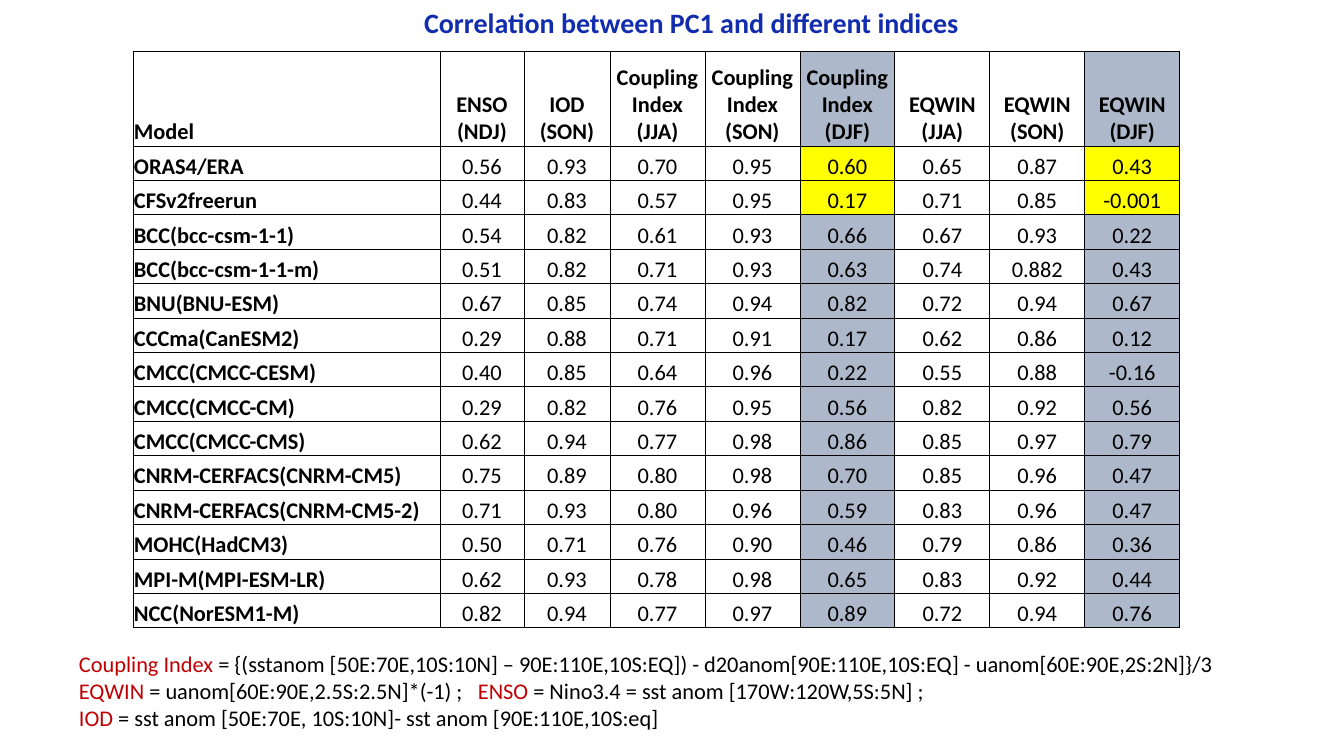
"""Build a slide with a table of PC1 correlations and the index definitions."""
from lxml import etree
from pptx import Presentation
from pptx.dml.color import RGBColor
from pptx.enum.text import MSO_ANCHOR, MSO_AUTO_SIZE, PP_ALIGN
from pptx.oxml.ns import qn
from pptx.util import Pt

LEFT, CENTER = PP_ALIGN.LEFT, PP_ALIGN.CENTER
BOTTOM = MSO_ANCHOR.BOTTOM
GROW = MSO_AUTO_SIZE.SHAPE_TO_FIT_TEXT
THEME = {
    "font": "Calibri", "title_size": 20, "text_size": 16, "border_width": 0.5,
    "title": "122CAE", "text": "000000", "term": "C00000", "paper": "FFFFFF",
    "shade": "ADB9CA", "highlight": "FFFF00",
}


def px(length):
    """Turn slide pixels into EMU."""
    return round(length * 914400 / 100.8)


def write(paragraph, text, color="text", size="text_size", bold=False, align=LEFT):
    """Add a formatted run to a paragraph."""
    paragraph.alignment = align
    run = paragraph.add_run()
    run.text = text
    run.font.name = THEME["font"]
    run.font.size = Pt(THEME[size])
    run.font.bold = bold
    run.font.color.rgb = RGBColor.from_string(THEME[color])


HEADERS = [
    "Model", "ENSO\n(NDJ)", "IOD\n(SON)",
    "Coupling Index (JJA)", "Coupling Index (SON)", "Coupling Index (DJF)",
    "EQWIN (JJA)", "EQWIN (SON)", "EQWIN (DJF)",
]
MODELS = """
ORAS4/ERA 0.56 0.93 0.70 0.95 0.60 0.65 0.87 0.43
CFSv2freerun 0.44 0.83 0.57 0.95 0.17 0.71 0.85 -0.001
BCC(bcc-csm-1-1) 0.54 0.82 0.61 0.93 0.66 0.67 0.93 0.22
BCC(bcc-csm-1-1-m) 0.51 0.82 0.71 0.93 0.63 0.74 0.882 0.43
BNU(BNU-ESM) 0.67 0.85 0.74 0.94 0.82 0.72 0.94 0.67
CCCma(CanESM2) 0.29 0.88 0.71 0.91 0.17 0.62 0.86 0.12
CMCC(CMCC-CESM) 0.40 0.85 0.64 0.96 0.22 0.55 0.88 -0.16
CMCC(CMCC-CM) 0.29 0.82 0.76 0.95 0.56 0.82 0.92 0.56
CMCC(CMCC-CMS) 0.62 0.94 0.77 0.98 0.86 0.85 0.97 0.79
CNRM-CERFACS(CNRM-CM5) 0.75 0.89 0.80 0.98 0.70 0.85 0.96 0.47
CNRM-CERFACS(CNRM-CM5-2) 0.71 0.93 0.80 0.96 0.59 0.83 0.96 0.47
MOHC(HadCM3) 0.50 0.71 0.76 0.90 0.46 0.79 0.86 0.36
MPI-M(MPI-ESM-LR) 0.62 0.93 0.78 0.98 0.65 0.83 0.92 0.44
NCC(NorESM1-M) 0.82 0.94 0.77 0.97 0.89 0.72 0.94 0.76
"""
DEFINITIONS = [
    [("Coupling Index ", "term"),
     ("= {(sstanom [50E:70E,10S:10N] – 90E:110E,10S:EQ]) - d20anom[90E:110E,10S:EQ]"
      " - uanom[60E:90E,2S:2N]}/3", "text")],
    [("EQWIN", "term"), (" = uanom[60E:90E,2.5S:2.5N]*(-1) ;\t", "text"),
     ("ENSO", "term"), (" = Nino3.4 = sst anom [170W:120W,5S:5N] ;", "text")],
    [("IOD", "term"), (" = sst anom [50E:70E, 10S:10N]- sst anom [90E:110E,10S:eq]", "text")],
]
COLUMN_WIDTHS = [307, 84, 86] + [95] * 6
HEADER_HEIGHT, BODY_HEIGHT = 95, 482
SHADED_COLUMNS = (5, 8)
HIGHLIGHTED_ROWS = (1, 2)

presentation = Presentation()
presentation.slide_width, presentation.slide_height = px(1344), px(756)
slide = presentation.slides.add_slide(presentation.slide_layouts[5])

title = slide.shapes.title
title.left, title.top, title.width, title.height = px(363), px(0), px(657), px(44)
title.fill.solid()
title.fill.fore_color.rgb = RGBColor.from_string(THEME["paper"])
title.text_frame.auto_size = GROW
write(title.text_frame.paragraphs[0], "Correlation between PC1 and different indices",
      color="title", size="title_size", bold=True, align=CENTER)

rows = [HEADERS] + [line.split() for line in MODELS.strip().splitlines()]
table = slide.shapes.add_table(
    len(rows), len(HEADERS), px(133), px(51),
    px(sum(COLUMN_WIDTHS)), px(HEADER_HEIGHT + BODY_HEIGHT)).table
table.first_row = table.horz_banding = False
for column, width in zip(table.columns, COLUMN_WIDTHS):
    column.width = px(width)
for row_index, values in enumerate(rows):
    is_header = row_index == 0
    table.rows[row_index].height = px(HEADER_HEIGHT if is_header else BODY_HEIGHT / (len(rows) - 1))
    for column_index, value in enumerate(values):
        is_name = column_index == 0
        cell = table.cell(row_index, column_index)
        cell.vertical_anchor = BOTTOM
        cell.margin_left = cell.margin_right = cell.margin_top = px(1)
        cell.margin_bottom = 0
        properties = cell._tc.get_or_add_tcPr()
        for side in ("a:lnL", "a:lnR", "a:lnT", "a:lnB"):
            border = etree.SubElement(properties, qn(side), w=str(Pt(THEME["border_width"])))
            border_fill = etree.SubElement(border, qn("a:solidFill"))
            etree.SubElement(border_fill, qn("a:srgbClr"), val=THEME["text"])
        if column_index in SHADED_COLUMNS:
            fill_name = "highlight" if row_index in HIGHLIGHTED_ROWS else "shade"
            cell.fill.solid()
            cell.fill.fore_color.rgb = RGBColor.from_string(THEME[fill_name])
        else:
            cell.fill.background()
        for line_index, line in enumerate(value.split("\n")):
            frame = cell.text_frame
            paragraph = frame.add_paragraph() if line_index else frame.paragraphs[0]
            write(paragraph, line, bold=is_header or is_name, align=LEFT if is_name else CENTER)

definitions = slide.shapes.add_textbox(px(69), px(645), px(1206), px(92)).text_frame
definitions.word_wrap = True
definitions.auto_size = GROW
for index, parts in enumerate(DEFINITIONS):
    paragraph = definitions.add_paragraph() if index else definitions.paragraphs[0]
    tab_list = etree.SubElement(paragraph._p.get_or_add_pPr(), qn("a:tabLst"))
    etree.SubElement(tab_list, qn("a:tab"), pos=str(px(399)), algn="l")
    for text, color in parts:
        write(paragraph, text, color=color)

presentation.save("out.pptx")
